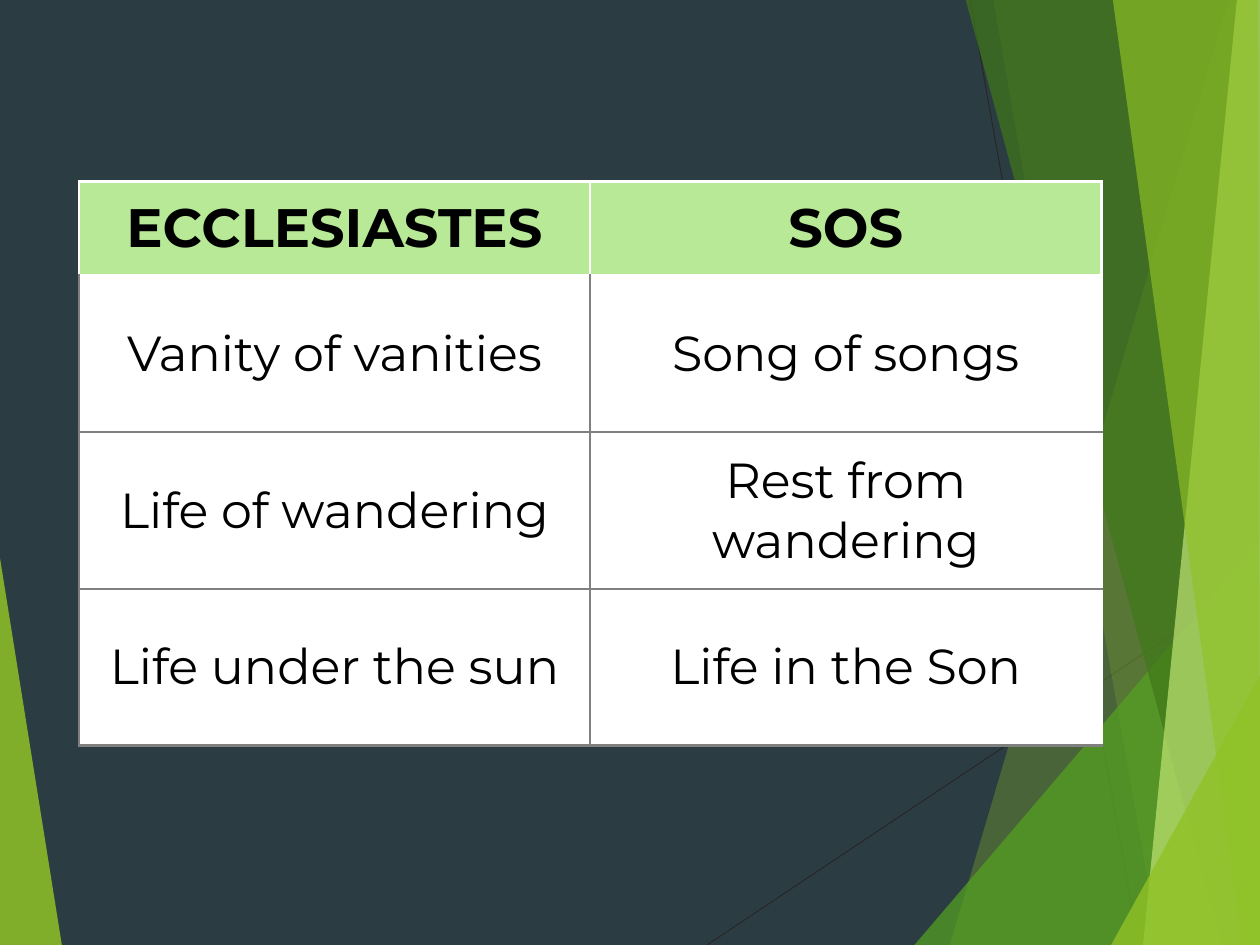
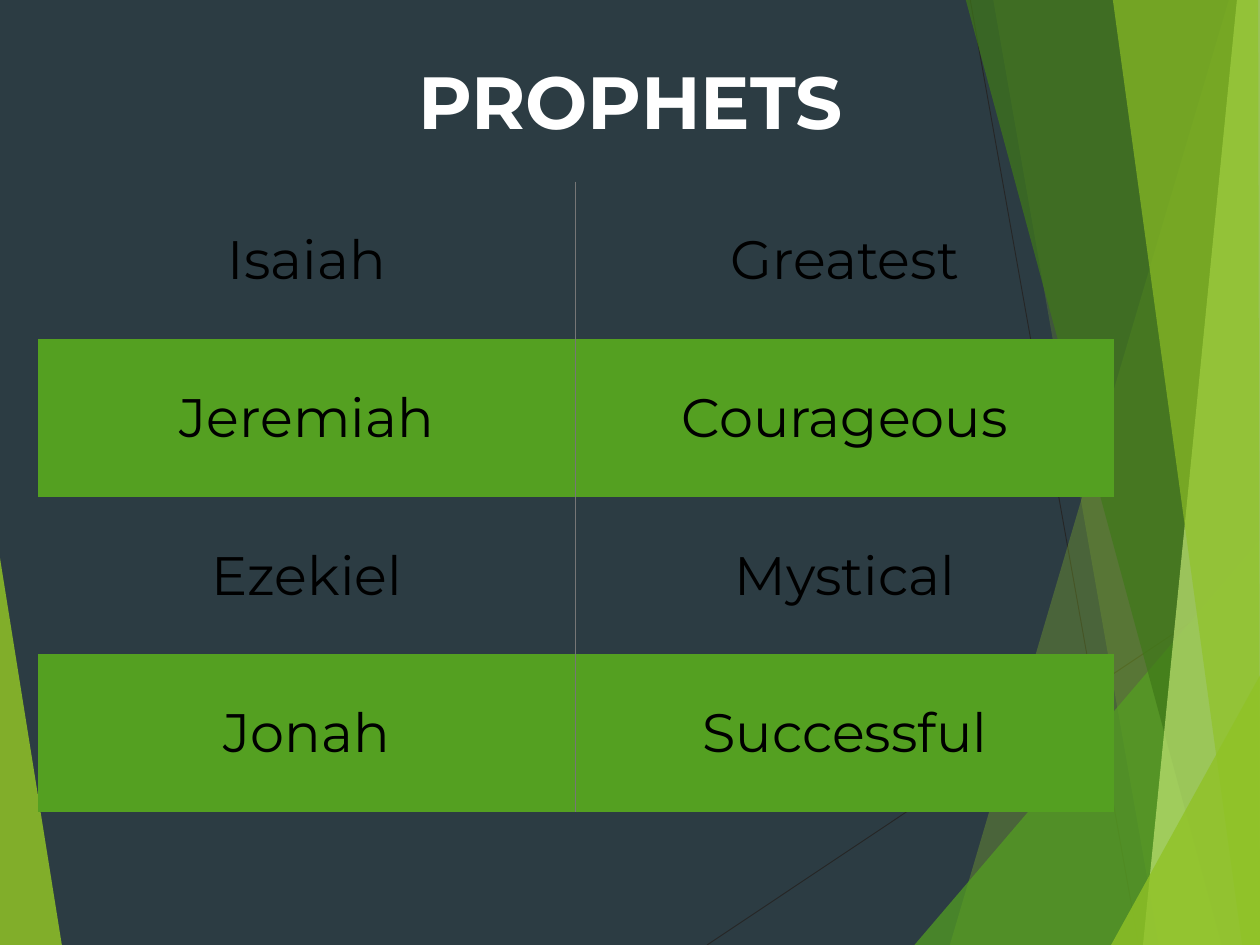
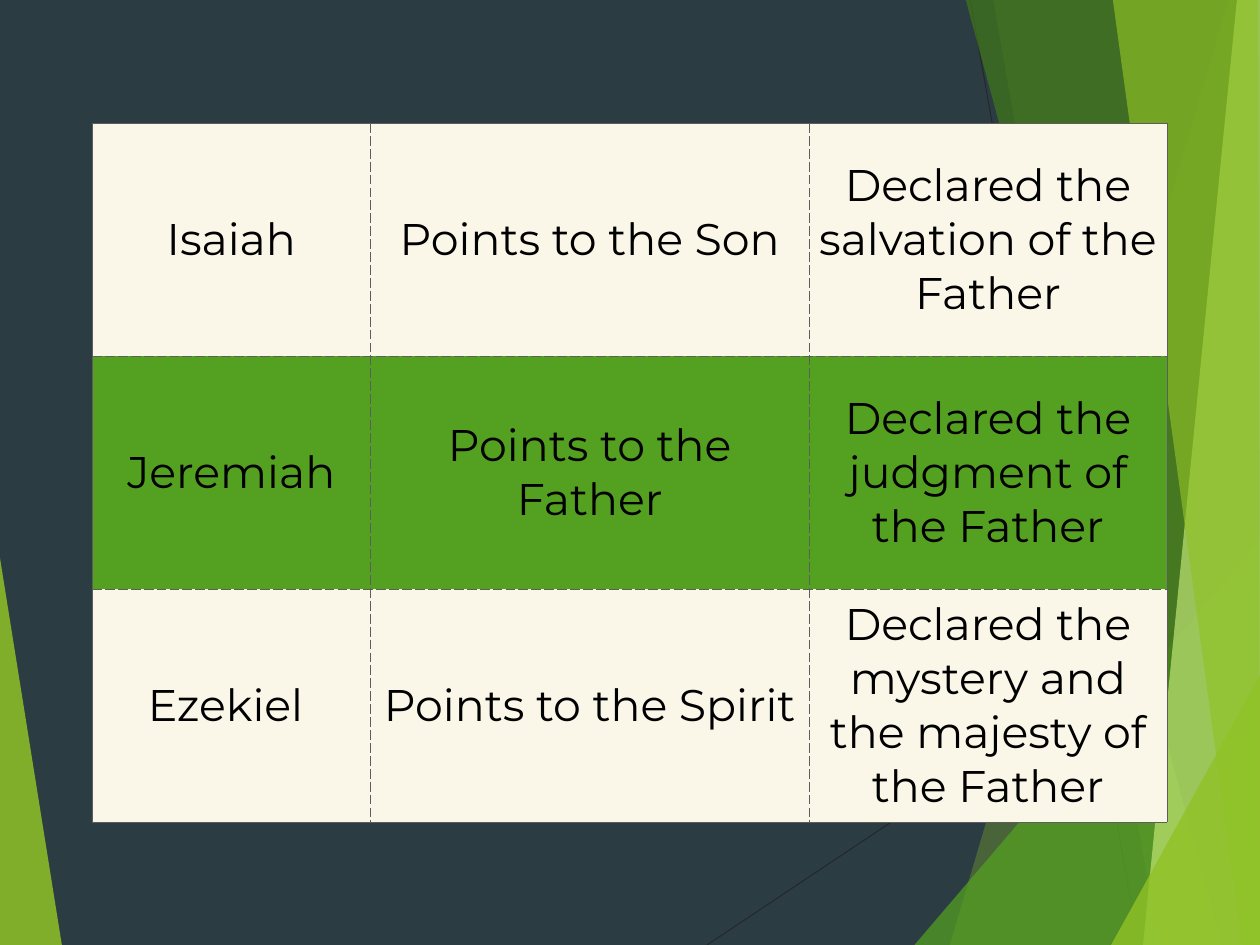
from dataclasses import dataclass
from typing import Callable, NamedTuple

from lxml.etree import SubElement
from pptx import Presentation
from pptx.dml.color import RGBColor
from pptx.enum.shapes import MSO_CONNECTOR
from pptx.enum.text import MSO_ANCHOR, MSO_AUTO_SIZE, PP_ALIGN
from pptx.oxml import parse_xml
from pptx.oxml.ns import nsdecls, qn
from pptx.util import Inches, Pt

FONT = "Montserrat"
NAVY, BLACK, WHITE = "2C3C43", "000000", "FFFFFF"
LIME, GREEN, FOREST, PALE = "90C226", "54A021", "3F7819", "C0E474"
MINT, CREAM, INK = "B7E996", "FAF7E9", "262626"
GREY, MID_GREY, DARK_GREY = "808080", "767676", "5D5D5D"
PLAIN_TABLE = "{2D5ABB26-0587-4C30-8999-92F81FD0307C}"
SIDES = ("L", "R", "T", "B")
W, H = 14.22, 10.67
TITLE_ONLY, BLANK = 5, 6

Point = tuple[float, float]


class Facet(NamedTuple):
    points: list[Point]
    color: str
    opacity: int


class Edge(NamedTuple):
    color: str
    width: float
    dash: str = "solid"


class Look(NamedTuple):
    fill: str | None
    size: int
    bold: bool = False


@dataclass
class Grid:
    left: float
    top: float
    cols: list[float]
    heights: list[float]
    rows: list[list[str]]
    looks: list[Look]
    margin: float
    edges: Callable[[int, int], dict[str, Edge]]


RAYS: list[tuple[Point, Point]] = [((7.98, H), (14.24, 6.49)), ((10.95, 0), (12.85, H))]

FACETS = [
    Facet([(-0.01, 6.24), (0.7, 10.68), (-0.01, H)], LIME, 85),
    Facet([(13.87, 0), (10.72, H), (14.25, H), (14.24, 0)], LIME, 30),
    Facet([(11.21, 0), (13.08, H), (14.24, H), (14.24, 0)], LIME, 20),
    Facet([(10.32, H), (14.22, 6.1), (14.23, H)], GREEN, 72),
    Facet([(10.9, 0), (13.79, H), (14.24, H), (14.24, 0)], FOREST, 70),
    Facet([(13.96, 0), (12.9, H), (14.24, H), (14.23, 0)], PALE, 70),
    Facet([(12.56, 0), (14.02, H), (14.22, H), (14.2, 0)], LIME, 65),
    Facet([(12.54, H), (14.23, 7.61), (14.24, H)], LIME, 80),
]


def rgb(color: str) -> RGBColor:
    return RGBColor.from_string(color)


def add_ray(s, start: Point, end: Point):
    ray = s.shapes.add_connector(MSO_CONNECTOR.STRAIGHT, *map(Inches, start + end))
    ray.line.color.rgb = rgb(INK)
    ray.line.width = Pt(0.75)
    SubElement(ray._element.spPr, qn("a:effectLst"))
    return ray


def add_facet(s, facet: Facet):
    first, *rest = [(Inches(x), Inches(y)) for x, y in facet.points]
    builder = s.shapes.build_freeform(*first)
    builder.add_line_segments(rest, close=True)
    sp = builder.convert_to_shape()
    sp.shadow.inherit = False
    sp.line.fill.background()
    sp.fill.solid()
    sp.fill.fore_color.rgb = rgb(facet.color)
    clr = sp._element.spPr.find(f"{qn('a:solidFill')}/{qn('a:srgbClr')}")
    SubElement(clr, qn("a:alpha"), val=str(facet.opacity * 1000))
    return sp


def decorate_master(prs, s) -> None:
    master = prs.slide_master
    master.background.fill.solid()
    master.background.fill.fore_color.rgb = rgb(NAVY)
    art = [add_ray(s, *ray) for ray in RAYS] + [add_facet(s, facet) for facet in FACETS]
    for i, sp in enumerate(art):
        master.shapes._spTree.insert(2 + i, sp._element)


def style_text(tf, text: str, size: int, color: str, bold: bool) -> None:
    tf.text = text
    p = tf.paragraphs[0]
    p.alignment = PP_ALIGN.CENTER
    p.font.name = FONT
    p.font.size = Pt(size)
    p.font.bold = bold
    p.font.color.rgb = rgb(color)


def set_edges(cell, edges: dict[str, Edge]) -> None:
    tcPr = cell._tc.get_or_add_tcPr()
    for i, side in enumerate(side for side in SIDES if side in edges):
        edge = edges[side]
        tcPr.insert(i, parse_xml(
            f'<a:ln{side} {nsdecls("a")} w="{Pt(edge.width)}">'
            f'<a:solidFill><a:srgbClr val="{edge.color}"/></a:solidFill>'
            f'<a:prstDash val="{edge.dash}"/></a:ln{side}>'))


def add_grid(s, grid: Grid) -> None:
    frame = s.shapes.add_table(
        len(grid.rows), len(grid.cols), Inches(grid.left), Inches(grid.top),
        Inches(sum(grid.cols)), Inches(sum(grid.heights)))
    table = frame.table
    table.first_row = table.horz_banding = False
    table._tbl.tblPr.find(qn("a:tableStyleId")).text = PLAIN_TABLE
    for col, width in zip(table.columns, grid.cols):
        col.width = Inches(width)
    for r, (row, look) in enumerate(zip(grid.rows, grid.looks)):
        table.rows[r].height = Inches(grid.heights[r])
        for c, text in enumerate(row):
            cell = table.cell(r, c)
            cell.vertical_anchor = MSO_ANCHOR.MIDDLE
            cell.margin_left = cell.margin_right = Inches(grid.margin)
            cell.margin_top = cell.margin_bottom = Inches(grid.margin)
            if look.fill:
                cell.fill.solid()
                cell.fill.fore_color.rgb = rgb(look.fill)
            else:
                cell.fill.background()
            style_text(cell.text_frame, text, look.size, BLACK, look.bold)
            set_edges(cell, grid.edges(r, c))


def add_title(s, text: str) -> None:
    title = s.shapes.title
    title.left, title.top, title.width, title.height = map(Inches, (4.51, 0.57, 5.21, 1.12))
    tf = title.text_frame
    tf.word_wrap = False
    tf.auto_size = MSO_AUTO_SIZE.SHAPE_TO_FIT_TEXT
    tf.vertical_anchor = MSO_ANCHOR.MIDDLE
    tf.margin_left = tf.margin_right = tf.margin_top = tf.margin_bottom = Inches(0.06)
    style_text(tf, text, 60, WHITE, True)


def book_edges(r: int, c: int) -> dict[str, Edge]:
    white, grey = Edge(WHITE, 2.25), Edge(GREY, 2.25)
    if r == 0:
        return dict.fromkeys(SIDES, white)
    return {"L": grey, "R": white if c == 1 else grey,
            "T": white if r == 1 else grey, "B": grey}


def prophet_edges(r: int, c: int) -> dict[str, Edge]:
    return {"R" if c == 0 else "L": Edge(MID_GREY, 1)}


def message_edges(r: int, c: int) -> dict[str, Edge]:
    outer = {"L": c == 0, "R": c == 2, "T": r == 0, "B": r == 2}
    return {side: Edge(DARK_GREY, 0.25, "solid" if outer[side] else "dash") for side in SIDES}


BOOKS = Grid(
    0.89, 2.05, [5.77] * 2, [1.06] + [1.77] * 3,
    [["ECCLESIASTES", "SOS"],
     ["Vanity of vanities", "Song of songs"],
     ["Life of wandering", "Rest from wandering"],
     ["Life under the sun", "Life in the Son"]],
    [Look(MINT, 44, True)] + [Look(WHITE, 40)] * 3, 0.06, book_edges)

PROPHETS = Grid(
    0.43, 2.05, [6.07] * 2, [1.78] * 4,
    [["Isaiah", "Greatest"],
     ["Jeremiah", "Courageous"],
     ["Ezekiel", "Mystical"],
     ["Jonah", "Successful"]],
    [Look(None, 44), Look(GREEN, 44)] * 2, 0.06, prophet_edges)

MESSAGES = Grid(
    1.04, 1.39, [3.14, 4.95, 4.04], [2.63] * 3,
    [["Isaiah", "Points to the Son", "Declared the salvation of the Father"],
     ["Jeremiah", "Points to the Father", "Declared the judgment of the Father"],
     ["Ezekiel ", "Points to the Spirit", "Declared the mystery and the majesty of the Father"]],
    [Look(CREAM, 36), Look(GREEN, 36), Look(CREAM, 36)], 0.08, message_edges)


def main() -> None:
    prs = Presentation()
    prs.slide_width, prs.slide_height = Inches(W), Inches(H)
    layouts = prs.slide_layouts

    s = prs.slides.add_slide(layouts[BLANK])
    decorate_master(prs, s)
    add_grid(s, BOOKS)

    s = prs.slides.add_slide(layouts[TITLE_ONLY])
    add_title(s, "PROPHETS")
    add_grid(s, PROPHETS)

    s = prs.slides.add_slide(layouts[BLANK])
    add_grid(s, MESSAGES)

    prs.save("out.pptx")


if __name__ == "__main__":
    main()
